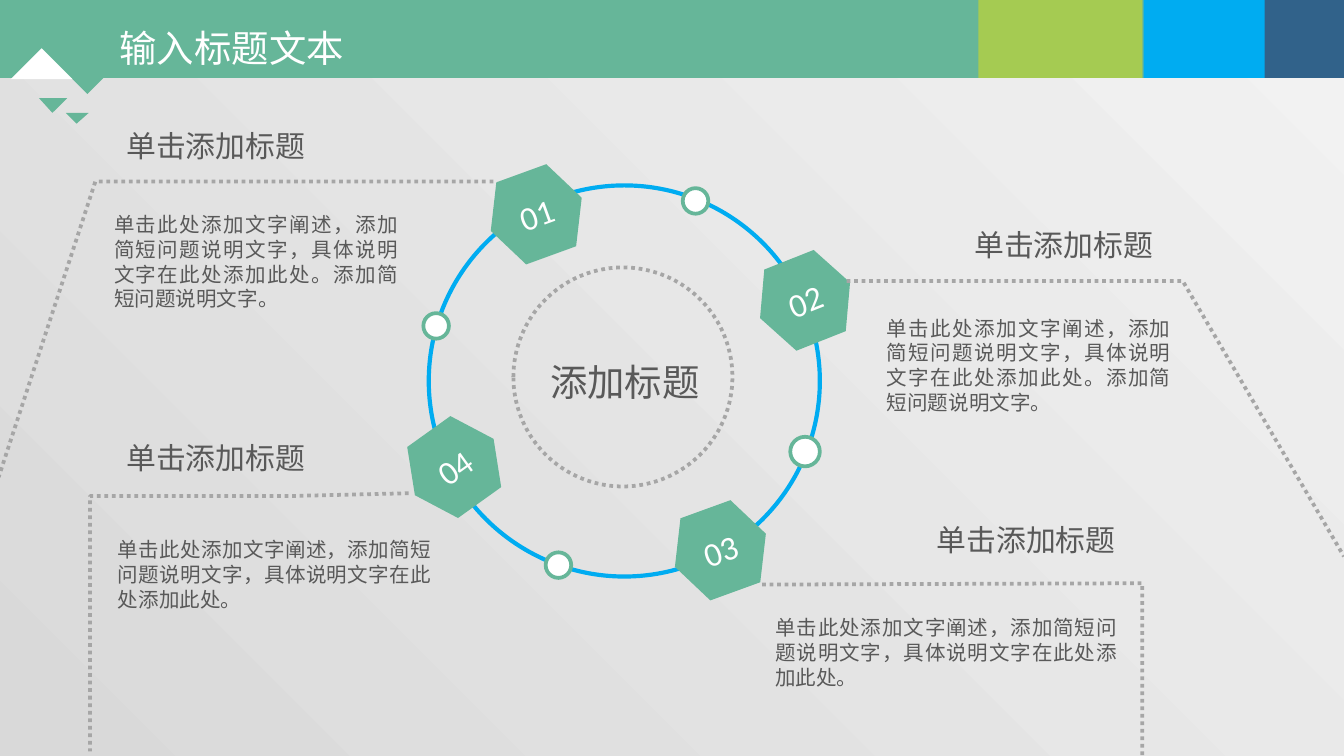
from dataclasses import dataclass

import pptx
import pptx.dml.color
import pptx.enum.dml
import pptx.enum.shapes
import pptx.enum.text
import pptx.oxml.ns
import pptx.util
from lxml import etree

Inches = pptx.util.Inches
Pt = pptx.util.Pt
Align = pptx.enum.text.PP_ALIGN
Anchor = pptx.enum.text.MSO_ANCHOR
Preset = pptx.enum.shapes.MSO_SHAPE
qn = pptx.oxml.ns.qn


@dataclass(frozen=True)
class Theme:
    green: str = "66B699"
    lime: str = "A5CB52"
    blue: str = "00ACF1"
    navy: str = "31628A"
    white: str = "FFFFFF"
    dots: str = "A6A6A6"
    text: str = "595959"
    shade: tuple = ("D9D9D9", "F2F2F2")
    cjk: str = "Noto Sans CJK SC"
    latin: str = "Calibri"
    title: int = 20
    number: int = 18
    heading: int = 16
    body: int = 11
    ring: float = 2.25
    outline: float = 2
    title_leading: float = 1.3


THEME = Theme()
HEADING = "单击添加标题"
SHORT = "单击此处添加文字阐述，添加简短问题说明文字，具体说明文字在此处添加此处。"
LONG = SHORT + "添加简短问题说明文字。"

BANNER = [
    (0, 8.84, THEME.green),
    (9.38, 0.62, THEME.navy),
    (8.51, 0.9, THEME.blue),
    (7.28, 1.22, THEME.lime),
]
TRIANGLES = [
    ([(0.48, 0.53), (0.82, 0.53), (0.65, 0.7)], THEME.green),
    ([(0.49, 0.84), (0.66, 0.84), (0.57, 0.92)], THEME.green),
    ([(0.08, 0.59), (0.54, 0.59), (0.31, 0.36)], THEME.white),
    ([(0.29, 0.73), (0.5, 0.73), (0.39, 0.84)], THEME.green),
]
BEADS = [(5.88, 3.25, 0.22), (5.08, 1.4, 0.19), (4.06, 4.11, 0.19), (3.15, 2.33, 0.19)]


@dataclass(frozen=True)
class Topic:
    number: str
    hexagon: tuple
    tilt: float
    heading: tuple
    body: tuple
    words: str
    leader: tuple


TOPICS = [
    Topic("01", (3.63, 1.27), 340, (0.83, 0.9), (0.75, 1.53, 2.31, 0.84), LONG,
          ((3.67, 1.35), (0.71, 1.35), (-0.01, 3.55))),
    Topic("02", (5.63, 1.91), 338.4, (7.14, 1.64), (6.5, 2.3, 2.31, 0.84), LONG,
          ((6.3, 2.09), (8.8, 2.09), (10, 4.14))),
    Topic("03", (5, 3.77), 340, (6.86, 3.83), (5.67, 4.53, 2.74, 0.66), SHORT,
          ((5.67, 4.35), (8.5, 4.34), (8.5, 5.64))),
    Topic("04", (3.02, 3.15), 324.4, (0.83, 3.22), (0.78, 3.95, 2.53, 0.66), SHORT,
          ((3.04, 3.67), (2.2, 3.69), (0.67, 3.69), (0.67, 5.59))),
]


def rgb(colour):
    return pptx.dml.color.RGBColor.from_string(colour)


def style_shape(shape, fill=None, line=None, width=THEME.outline, dotted=False):
    shape.shadow.inherit = False
    if fill:
        shape.fill.solid()
        shape.fill.fore_color.rgb = rgb(fill)
    else:
        shape.fill.background()
    if line:
        shape.line.color.rgb = rgb(line)
        shape.line.width = Pt(width)
        if dotted:
            shape.line.dash_style = pptx.enum.dml.MSO_LINE.ROUND_DOT
    else:
        shape.line.fill.background()


def add_preset(slide, preset, box, **style):
    shape = slide.shapes.add_shape(preset, *map(Inches, box))
    style_shape(shape, **style)
    return shape


def add_outline(slide, points, close=False, **style):
    start, *rest = [(Inches(x), Inches(y)) for x, y in points]
    builder = slide.shapes.build_freeform(*start)
    builder.add_line_segments(rest, close=close)
    style_shape(builder.convert_to_shape(), **style)


def write(frame, words, size, colour, align, font=THEME.cjk, leading=1.0):
    frame.text = words
    paragraph = frame.paragraphs[0]
    paragraph.alignment = align
    paragraph.line_spacing = leading
    run = paragraph.runs[0]
    run.font.size = Pt(size)
    run.font.name = font
    run.font.color.rgb = rgb(colour)
    east_asian = etree.SubElement(run.font._element, qn("a:ea"))
    east_asian.set("typeface", font)


def add_text(slide, box, words, size, align=Align.CENTER, wrap=False):
    frame = slide.shapes.add_textbox(*map(Inches, box)).text_frame
    frame.word_wrap = wrap
    write(frame, words, size, THEME.text, align)


def paint_background(slide):
    fill = slide.background.fill
    fill.gradient()
    fill.gradient_angle = 45
    for stop, colour, position in zip(fill.gradient_stops, THEME.shade, (0, 1)):
        stop.color.rgb = rgb(colour)
        stop.position = position


def add_header(slide):
    for left, width, colour in BANNER:
        add_preset(slide, Preset.RECTANGLE, (left, 0, width, 0.58), fill=colour)
    for corners, colour in TRIANGLES:
        add_outline(slide, corners, close=True, fill=colour)
    title = slide.shapes.title
    title.left, title.top, title.width, title.height = map(Inches, (0.89, 0.09, 1.9, 0.44))
    frame = title.text_frame
    frame.margin_left = frame.margin_right = frame.margin_top = frame.margin_bottom = 0
    frame.vertical_anchor = Anchor.TOP
    frame.auto_size = pptx.enum.text.MSO_AUTO_SIZE.NONE
    write(frame, "输入标题文本", THEME.title, THEME.white, Align.LEFT,
          leading=THEME.title_leading)
    slide.shapes.element.append(title.element)


def add_ring(slide):
    add_preset(slide, Preset.OVAL, (3.19, 1.38, 2.91, 2.91), line=THEME.blue, width=THEME.ring)
    for left, top, size in BEADS:
        add_preset(slide, Preset.OVAL, (left, top, size, size),
                   fill=THEME.white, line=THEME.green)
    add_preset(slide, Preset.OVAL, (3.82, 1.99, 1.63, 1.63), line=THEME.dots, dotted=True)
    add_text(slide, (3.99, 2.62, 1.32, 0.44), "添加标题", THEME.title)


def add_topic(slide, topic):
    hexagon = add_preset(slide, Preset.HEXAGON, (*topic.hexagon, 0.72, 0.65), fill=THEME.green)
    hexagon.rotation = topic.tilt
    hexagon.text_frame.word_wrap = False
    hexagon.text_frame.vertical_anchor = Anchor.MIDDLE
    write(hexagon.text_frame, topic.number, THEME.number, THEME.white, Align.CENTER,
          font=THEME.latin)
    add_outline(slide, topic.leader, line=THEME.dots, dotted=True)
    add_text(slide, (*topic.heading, 1.55, 0.37), HEADING, THEME.heading)
    add_text(slide, topic.body, topic.words, THEME.body, Align.JUSTIFY, wrap=True)


def main():
    deck = pptx.Presentation()
    deck.slide_width = Inches(10)
    deck.slide_height = deck.slide_width * 9 // 16
    slide = deck.slides.add_slide(deck.slide_layouts[5])
    paint_background(slide)
    add_header(slide)
    add_ring(slide)
    for topic in TOPICS:
        add_topic(slide, topic)
    deck.save("out.pptx")


if __name__ == "__main__":
    main()
